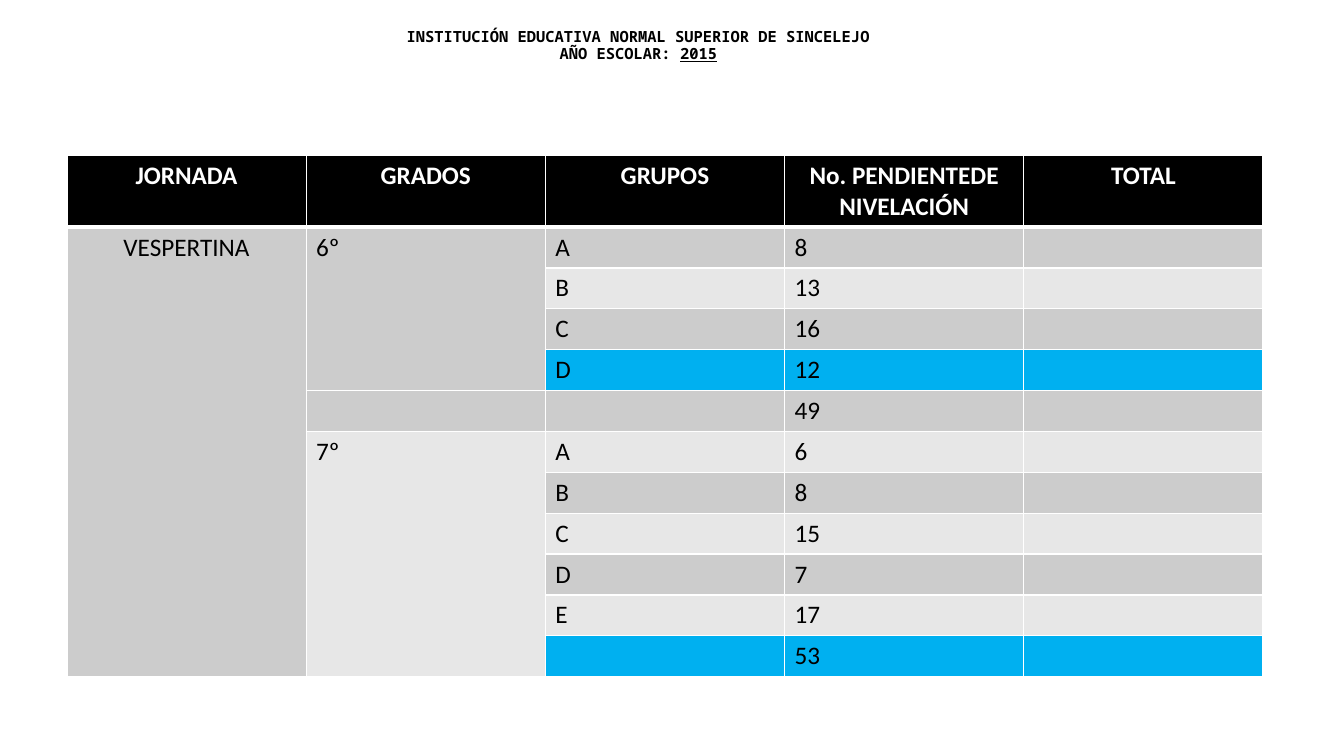
from lxml import etree
from pptx import Presentation
from pptx import util as u
from pptx.dml.color import RGBColor
from pptx.enum import text
from pptx.oxml import ns

COLORS = {"black": "000000", "white": "FFFFFF", "dark": "CCCCCC",
          "light": "E7E7E7", "blue": "00B0F0"}
TITLE = [[("INSTITUCIÓN EDUCATIVA NORMAL SUPERIOR DE SINCELEJO", False)],
         [("AÑO ESCOLAR: ", False), ("2015", True)]]
HEADERS = ["JORNADA", "GRADOS", "GRUPOS", "No. PENDIENTEDE NIVELACIÓN", "TOTAL"]
ROWS = [
    ("VESPERTINA", "6º", "A", "8", ""),
    ("", "", "B", "13", ""),
    ("", "", "C", "16", ""),
    ("", "", "D", "12", ""),
    ("", "", "", "49", ""),
    ("", "7º", "A", "6", ""),
    ("", "", "B", "8", ""),
    ("", "", "C", "15", ""),
    ("", "", "D", "7", ""),
    ("", "", "E", "17", ""),
    ("", "", "", "53", ""),
]
MERGES = [(1, 11, 0), (1, 4, 1), (6, 11, 1)]
BLUE_ROWS = {4, 11}
FIRST_BLUE_COLUMN = 2
SLIDE = (960, 540)
TITLE_BOX = (150, 16, 612, 34)
TABLE_LEFT, TABLE_TOP, TABLE_WIDTH = 47.8, 111, 854.5
HEADER_HEIGHT, ROW_HEIGHT = 51, 29.2
THIN, THICK = 1, 3


def rgb(name):
    return RGBColor.from_string(COLORS[name])


def add_span(para, words, color, **values):
    span = para.add_run()
    span.text = words
    span.font.color.rgb = rgb(color)
    for name, value in values.items():
        setattr(span.font, name, value)


def add_borders(cell, row):
    properties = cell._tc.get_or_add_tcPr()
    widths = {"lnL": THIN, "lnR": THIN,
              "lnT": THICK if row == 1 else THIN,
              "lnB": THICK if row == 0 else THIN}
    for side, width in widths.items():
        line = etree.SubElement(properties, ns.qn("a:" + side), w=str(u.Pt(width)))
        fill = etree.SubElement(line, ns.qn("a:solidFill"))
        etree.SubElement(fill, ns.qn("a:srgbClr"), val=COLORS["white"])


def cell_color(row, column):
    if row == 0:
        return "black"
    if row in BLUE_ROWS and column >= FIRST_BLUE_COLUMN:
        return "blue"
    return "dark" if row % 2 else "light"


def add_title(page):
    box = page.shapes.title
    box.left, box.top, box.width, box.height = map(u.Pt, TITLE_BOX)
    frame = box.text_frame
    frame.auto_size = text.MSO_AUTO_SIZE.NONE
    frame.vertical_anchor = text.MSO_ANCHOR.MIDDLE
    for index, spans in enumerate(TITLE):
        para = frame.add_paragraph() if index else frame.paragraphs[0]
        para.alignment = text.PP_ALIGN.CENTER
        para.line_spacing = 0.9
        for words, underline in spans:
            add_span(para, words, "black", name="Noto Sans Mono", size=u.Pt(11),
                     bold=True, underline=underline)


def add_grades(page):
    grid = [HEADERS] + ROWS
    height = HEADER_HEIGHT + ROW_HEIGHT * len(ROWS)
    place = map(u.Pt, (TABLE_LEFT, TABLE_TOP, TABLE_WIDTH, height))
    table = page.shapes.add_table(len(grid), len(HEADERS), *place).table
    for column in table.columns:
        column.width = u.Pt(TABLE_WIDTH / len(HEADERS))
    for row, values in enumerate(grid):
        table.rows[row].height = u.Pt(ROW_HEIGHT if row else HEADER_HEIGHT)
        for column, words in enumerate(values):
            cell = table.cell(row, column)
            add_borders(cell, row)
            cell.fill.solid()
            cell.fill.fore_color.rgb = rgb(cell_color(row, column))
            if words:
                para = cell.text_frame.paragraphs[0]
                centred = row == 0 or column == 0
                para.alignment = text.PP_ALIGN.CENTER if centred else text.PP_ALIGN.LEFT
                add_span(para, words, "black" if row else "white",
                         name="Calibri", size=u.Pt(18), bold=row == 0)
    for first, last, column in MERGES:
        table.cell(first, column).merge(table.cell(last, column))


def main():
    deck = Presentation()
    deck.slide_width, deck.slide_height = map(u.Pt, SLIDE)
    page = deck.slides.add_slide(deck.slide_layouts[5])
    add_title(page)
    add_grades(page)
    deck.save("out.pptx")


if __name__ == "__main__":
    main()
